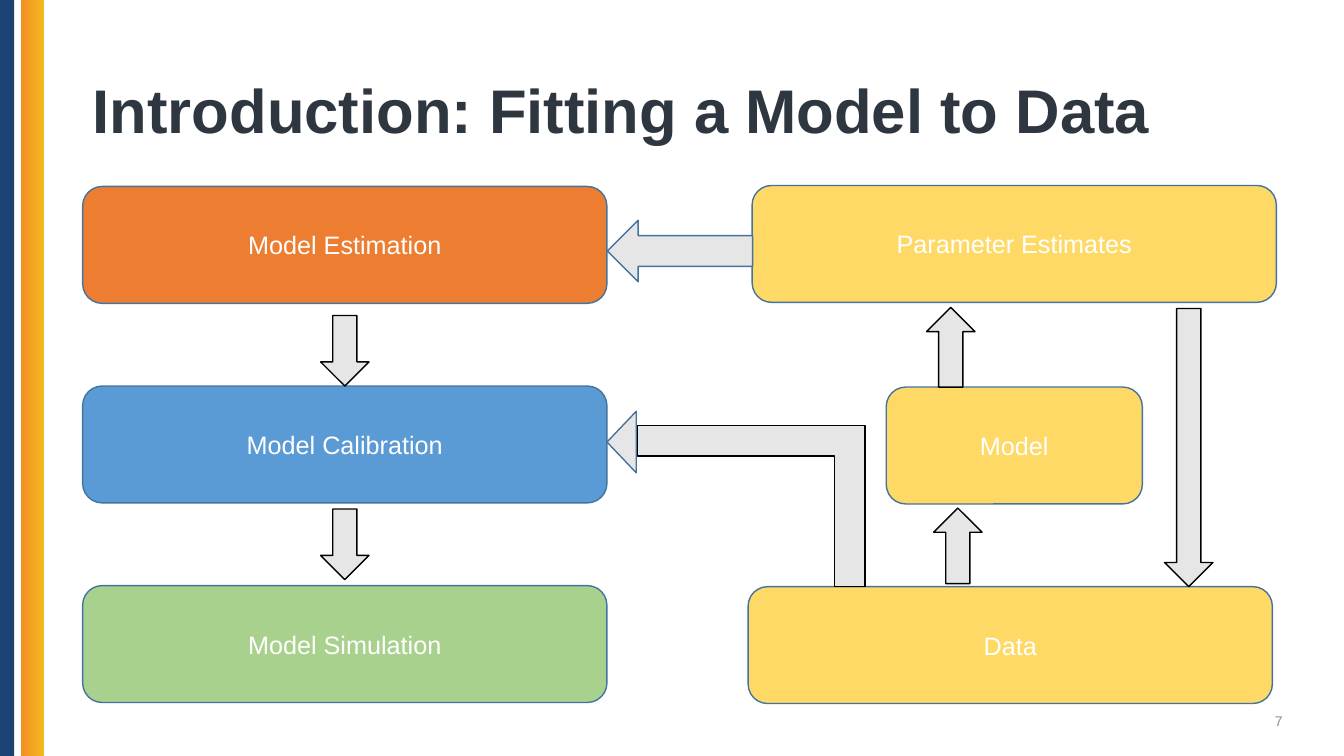
from dataclasses import dataclass

from pptx import Presentation
from pptx.dml.color import RGBColor
from pptx.enum.shapes import MSO_SHAPE
from pptx.enum.text import MSO_ANCHOR, PP_ALIGN
from pptx.shapes.autoshape import Shape
from pptx.slide import Slide
from pptx.text.text import TextFrame
from pptx.util import Inches, Pt

RECT = MSO_SHAPE.RECTANGLE
ROUNDED = MSO_SHAPE.ROUNDED_RECTANGLE
UP_ARROW = MSO_SHAPE.UP_ARROW
CORNER = MSO_SHAPE.CORNER
MIDDLE = MSO_ANCHOR.MIDDLE
LEFT, CENTER, RIGHT = PP_ALIGN.LEFT, PP_ALIGN.CENTER, PP_ALIGN.RIGHT
TITLE_ONLY = 5


@dataclass(frozen=True)
class Theme:
    font: str = "Arial"
    title_size: float = 44
    box_size: float = 18
    number_size: float = 10
    line_width: float = 1
    title: str = "2E3640"
    number: str = "8C8C8C"
    box_text: str = "FFFFFF"
    box_line: str = "43739E"
    arrow_fill: str = "E7E6E6"
    arrow_line: str = "000000"
    navy: str = "1B4273"
    band_start: str = "F38F22"
    band_end: str = "F1BA20"
    estimation: str = "ED7D31"
    calibration: str = "5B9BD5"
    simulation: str = "A9D18E"
    source: str = "FFD966"


THEME = Theme()


@dataclass(frozen=True)
class Box:
    label: str
    fill: str
    left: float
    top: float
    width: float = 5.2
    height: float = 1.16


@dataclass(frozen=True)
class Arrow:
    left: float
    top: float
    height: float
    width: float = 0.48
    rotation: float = 0
    line: str = THEME.arrow_line
    kind: MSO_SHAPE = UP_ARROW
    adjustments: tuple[float, ...] = ()


STAGE_LEFT, STAGE_TOP, ROW_PITCH = 0.82, 1.85, 1.98
STAGES = [
    ("Model Estimation", THEME.estimation),
    ("Model Calibration", THEME.calibration),
    ("Model Simulation", THEME.simulation),
]
BOXES = [
    Box(label, fill, STAGE_LEFT, STAGE_TOP + row * ROW_PITCH)
    for row, (label, fill) in enumerate(STAGES)
] + [
    Box("Model", THEME.source, 8.79, 3.84, width=2.54),
    Box("Data", THEME.source, 7.42, 5.82),
    Box("Parameter Estimates", THEME.source, 7.46, 1.84),
]
ARROWS = [
    Arrow(3.18, 3.13, 0.7, rotation=180),
    Arrow(3.18, 5.05, 0.7, rotation=180),
    Arrow(9.26, 5.04, 0.75),
    Arrow(9.19, 3.05, 0.79),
    Arrow(11.55, 3.06, 2.76, rotation=180),
    Arrow(6.32, 4.22, 1.6, width=2.26, rotation=180,
          kind=CORNER, adjustments=(0.19, 0.19)),
    Arrow(6.44, 1.77, 1.44, width=0.61, rotation=270, line=THEME.box_line),
    Arrow(5.86, 4.24, 0.29, width=0.61, rotation=270, line=THEME.box_line,
          adjustments=(0.5, 1)),
]


def rgb(value: str) -> RGBColor:
    return RGBColor.from_string(value)


def write(frame: TextFrame, text: str, size: float, color: str,
          align: PP_ALIGN, bold: bool = False) -> None:
    frame.word_wrap = True
    frame.vertical_anchor = MIDDLE
    paragraph = frame.paragraphs[0]
    paragraph.alignment = align
    run = paragraph.add_run()
    run.text = text
    run.font.name = THEME.font
    run.font.size = Pt(size)
    run.font.bold = bold
    run.font.color.rgb = rgb(color)


def add_solid(slide: Slide, kind: MSO_SHAPE, left: float, top: float,
              width: float, height: float, fill: str, line: str | None = None) -> Shape:
    solid = slide.shapes.add_shape(
        kind, Inches(left), Inches(top), Inches(width), Inches(height))
    solid.shadow.inherit = False
    solid.fill.solid()
    solid.fill.fore_color.rgb = rgb(fill)
    if line is None:
        solid.line.fill.background()
    else:
        solid.line.color.rgb = rgb(line)
        solid.line.width = Pt(THEME.line_width)
    return solid


def add_side_bands(slide: Slide) -> None:
    add_solid(slide, RECT, -0.03, 0, 0.17, 7.5, THEME.navy)
    band = add_solid(slide, RECT, 0.21, 0, 0.23, 7.5, THEME.band_start)
    band.fill.gradient()
    band.fill.gradient_angle = 0
    for stop, color in zip(band.fill.gradient_stops, (THEME.band_start, THEME.band_end)):
        stop.color.rgb = rgb(color)


def add_title(slide: Slide, text: str) -> None:
    title = slide.shapes.title
    title.left, title.top = Inches(0.82), Inches(0.4)
    title.width, title.height = Inches(12), Inches(1.45)
    write(title.text_frame, text, THEME.title_size, THEME.title, LEFT, bold=True)
    title.text_frame.paragraphs[0].line_spacing = 0.9


def add_page_number(slide: Slide, number: str) -> None:
    page_number = slide.shapes.add_textbox(
        Inches(9.82), Inches(6.95), Inches(3), Inches(0.4))
    write(page_number.text_frame, number, THEME.number_size, THEME.number, RIGHT)


def add_box(slide: Slide, box: Box) -> None:
    panel = add_solid(slide, ROUNDED, box.left, box.top, box.width, box.height,
                      box.fill, THEME.box_line)
    write(panel.text_frame, box.label, THEME.box_size, THEME.box_text, CENTER)


def add_arrow(slide: Slide, arrow: Arrow) -> None:
    pointer = add_solid(slide, arrow.kind, arrow.left, arrow.top, arrow.width,
                        arrow.height, THEME.arrow_fill, arrow.line)
    pointer.rotation = arrow.rotation
    for index, value in enumerate(arrow.adjustments):
        pointer.adjustments[index] = value


def main() -> None:
    deck = Presentation()
    deck.slide_width, deck.slide_height = Inches(13.33), Inches(7.5)
    slide = deck.slides.add_slide(deck.slide_layouts[TITLE_ONLY])
    add_side_bands(slide)
    add_title(slide, "Introduction: Fitting a Model to Data")
    add_page_number(slide, "7")
    for box in BOXES:
        add_box(slide, box)
    for arrow in ARROWS:
        add_arrow(slide, arrow)
    deck.save("out.pptx")


if __name__ == "__main__":
    main()
